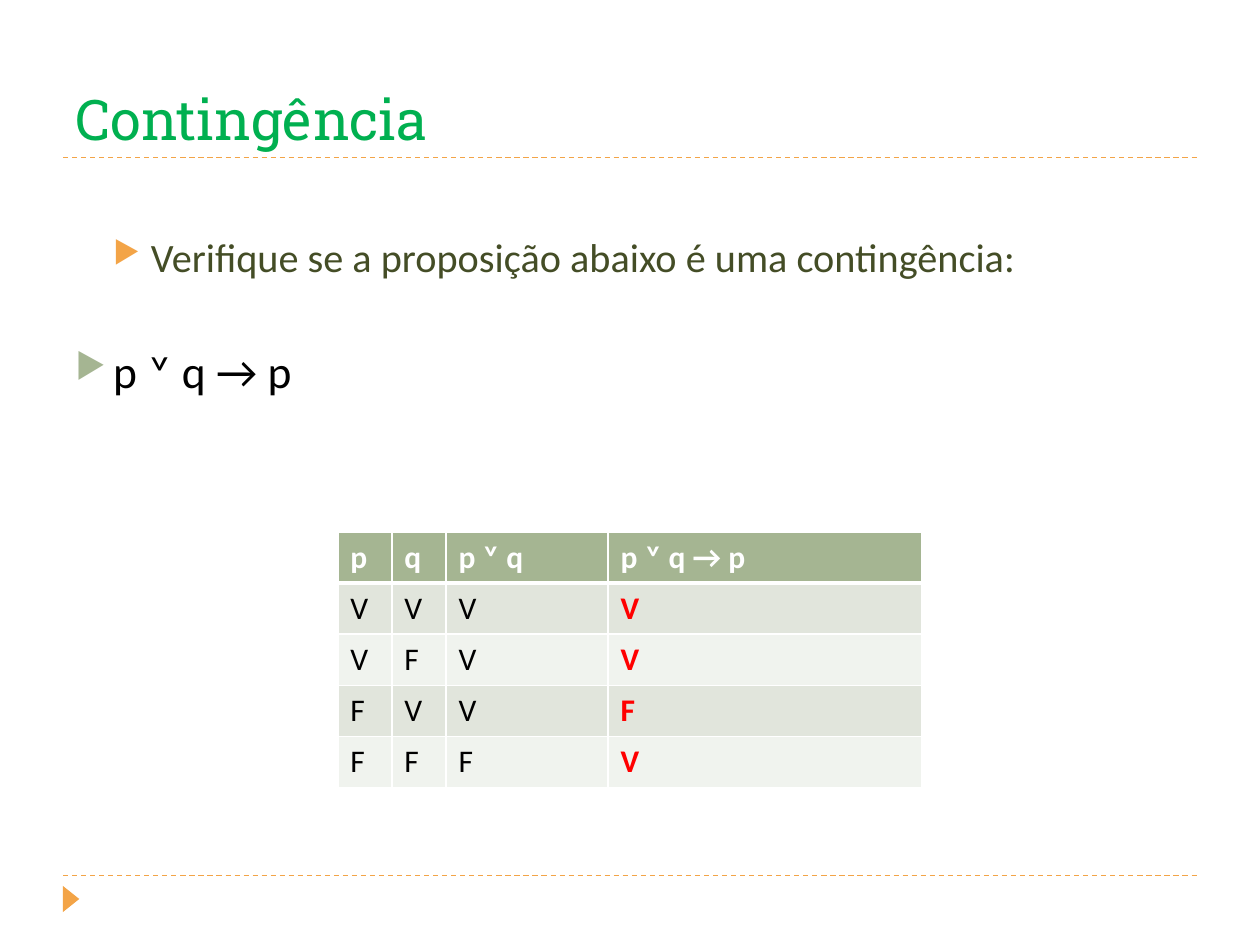
from lxml.etree import SubElement
from pptx import Presentation
from pptx.dml.color import RGBColor
from pptx.enum.dml import MSO_LINE
from pptx.enum.shapes import MSO_CONNECTOR, MSO_SHAPE
from pptx.enum.text import MSO_ANCHOR, PP_ALIGN
from pptx.oxml.ns import qn
from pptx.util import Pt

ORANGE, GREEN, BLACK, WHITE, RED = "F3A447", "A5B592", "000000", "FFFFFF", "FF0000"


def color(value):
    return RGBColor.from_string(value)


def style(font, size, shade, name="Calibri", bold=False):
    formats = {"size": Pt(size), "name": name, "bold": bold}
    for key, value in formats.items():
        setattr(font, key, value)
    font.color.rgb = color(shade)


prs = Presentation()
prs.slide_width, prs.slide_height = Pt(720), Pt(540)
slide = prs.slides.add_slide(prs.slide_layouts[6])
shapes = slide.shapes

# Dashed rules below the title and above the footer
for y in (500.4, 90):
    rule = shapes.add_connector(MSO_CONNECTOR.STRAIGHT, Pt(36), Pt(y), Pt(684), Pt(y))
    rule.line.color.rgb = color(ORANGE)
    rule.line.width = Pt(0.75)
    rule.line.dash_style = MSO_LINE.DASH
    SubElement(rule._element.spPr, qn("a:effectLst"))

# Footer marker
marker = shapes.add_shape(MSO_SHAPE.ISOSCELES_TRIANGLE, Pt(33.1), Pt(509), Pt(15), Pt(9.4))
marker.rotation = 90
marker.shadow.inherit = False
marker.fill.solid()
marker.fill.fore_color.rgb = color(ORANGE)
marker.line.fill.background()

# Title
title = shapes.add_textbox(Pt(36), Pt(12.2), Pt(648), Pt(77.8)).text_frame
title.word_wrap = True
title.vertical_anchor = MSO_ANCHOR.BOTTOM
title.text = "Contingência"
style(title.paragraphs[0].runs[0].font, 32, "00B050", "Roboto Slab")

# Question and proposition
body = shapes.add_textbox(Pt(36), Pt(95.8), Pt(648), Pt(388.8)).text_frame
body.word_wrap = True
body.margin_top = Pt(37)
items = [
    # text, size, text colour, bullet colour, left margin, space before, alignment
    ("Verifique se a proposição abaixo é uma contingência:",
     23, "444D26", ORANGE, 43.2, 0, PP_ALIGN.JUSTIFY),
    ("p ˅ q → p", 26, BLACK, GREEN, 21.6, 35.5, PP_ALIGN.LEFT),
]
for i, (text, size, shade, bullet, margin, before, align) in enumerate(items):
    item = body.paragraphs[0] if i == 0 else body.add_paragraph()
    item.alignment = align
    item.space_before = Pt(before)
    props = item._p.get_or_add_pPr()
    props.set("marL", str(Pt(margin)))
    props.set("indent", str(-Pt(21.6)))
    SubElement(SubElement(props, qn("a:buClr")), qn("a:srgbClr"), val=bullet)
    SubElement(props, qn("a:buSzPct"), val="76000")
    SubElement(props, qn("a:buChar"), char="▶")
    run = item.add_run()
    run.text = text
    style(run.font, size, shade)

# Truth table
truth_rows = [
    ("p", "q", "p ˅ q", "p ˅ q → p"),
    ("V", "V", "V", "V"),
    ("V", "F", "V", "V"),
    ("F", "V", "V", "F"),
    ("F", "F", "F", "V"),
]
widths = (30.9, 30.9, 92.7, 179.5)
row_height = 29.2
truth = shapes.add_table(len(truth_rows), len(widths), Pt(193), Pt(304),
                         Pt(sum(widths)), Pt(row_height * len(truth_rows))).table
for column, width in zip(truth.columns, widths):
    column.width = Pt(width)
for r, values in enumerate(truth_rows):
    truth.rows[r].height = Pt(row_height)
    for c, value in enumerate(values):
        cell = truth.cell(r, c)
        cell.text = value
        result = r > 0 and c == len(widths) - 1
        shade = WHITE if r == 0 else RED if result else BLACK
        style(cell.text_frame.paragraphs[0].runs[0].font, 18, shade, bold=r == 0 or result)
        # White borders, thicker under the header
        weights = {"L": 1, "R": 1, "T": 3 if r == 1 else 1, "B": 3 if r == 0 else 1}
        for side, weight in weights.items():
            border = SubElement(cell._tc.get_or_add_tcPr(), qn(f"a:ln{side}"), w=str(Pt(weight)))
            SubElement(SubElement(border, qn("a:solidFill")), qn("a:srgbClr"), val=WHITE)
        cell.fill.solid()
        cell.fill.fore_color.rgb = color(GREEN if r == 0 else "E1E5DC" if r % 2 else "F0F3EE")

prs.save("out.pptx")
